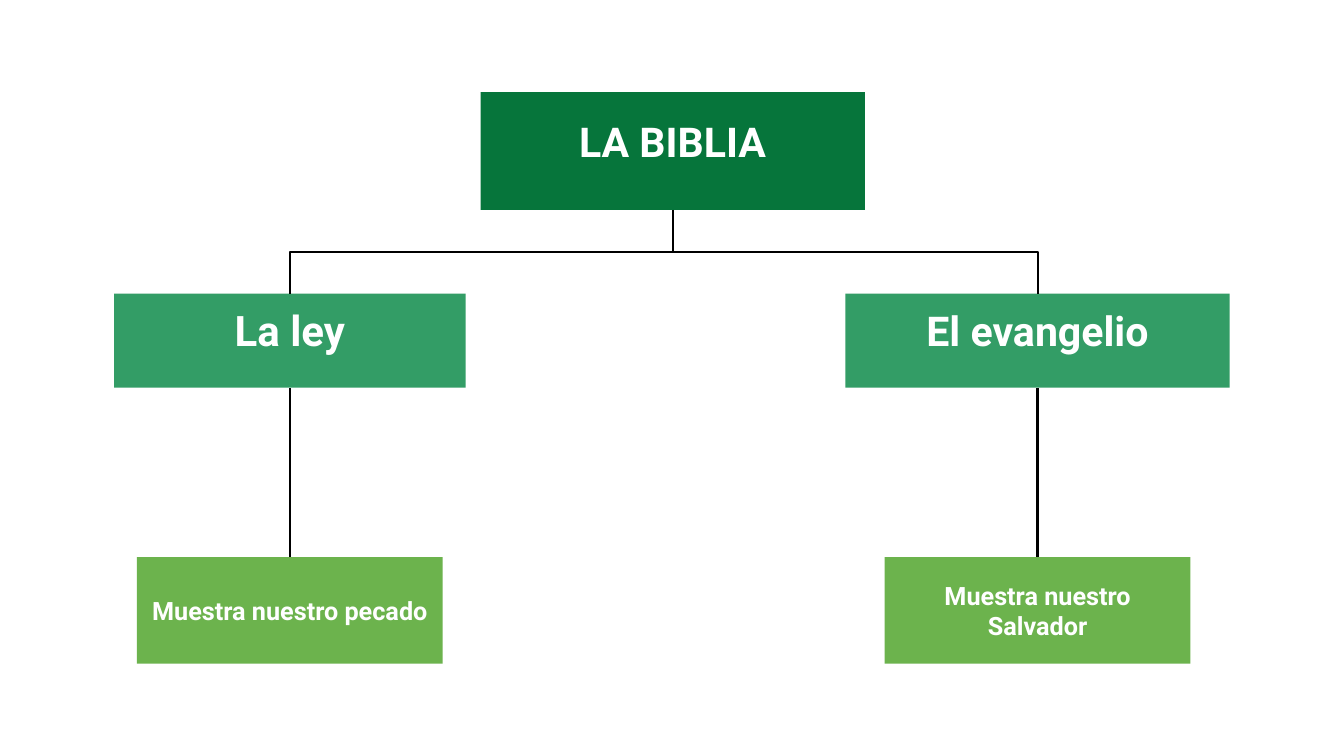
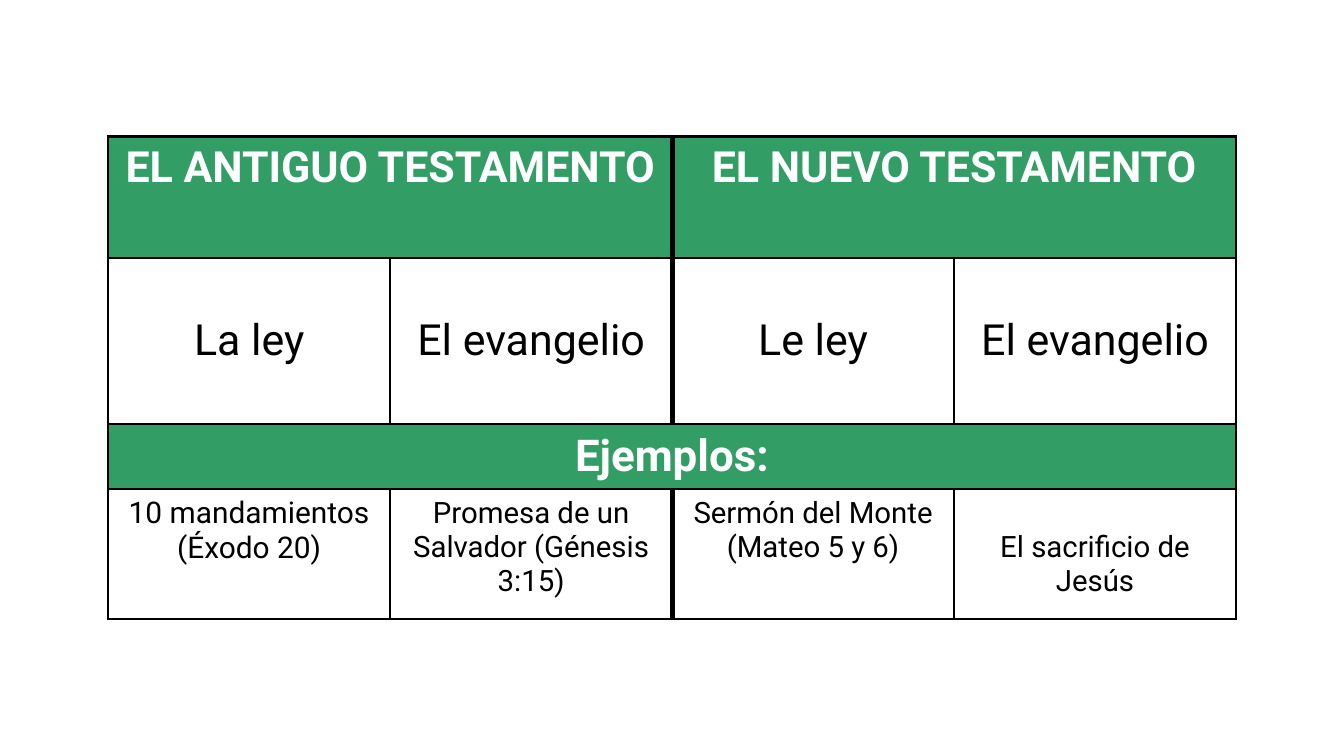
from lxml.etree import SubElement
from pptx import Presentation
from pptx.dml.color import RGBColor
from pptx.enum.shapes import MSO_CONNECTOR, MSO_SHAPE
from pptx.enum.text import MSO_ANCHOR, PP_ALIGN
from pptx.oxml import parse_xml
from pptx.oxml.ns import nsdecls, qn
from pptx.util import Pt

COLORS = {
    "root": "06753B",
    "branch": "008540",
    "leaf": "6CB34D",
    "white": "FFFFFF",
    "black": "000000",
}


def set_fill(fill, properties, color):
    fill.solid()
    fill.fore_color.rgb = RGBColor.from_string(COLORS[color])
    if color == "branch":
        rgb = properties.find(f"{qn('a:solidFill')}/{qn('a:srgbClr')}")
        SubElement(rgb, qn("a:alpha"), val="80000")


def write(text_frame, text, size, color, bold, spacing):
    text_frame.text = text
    for paragraph in text_frame.paragraphs:
        paragraph.alignment = PP_ALIGN.CENTER
        paragraph.line_spacing = spacing
        font_format = {"name": "Roboto", "size": Pt(size), "bold": bold}
        for name, value in font_format.items():
            setattr(paragraph.runs[0].font, name, value)
        paragraph.runs[0].font.color.rgb = RGBColor.from_string(COLORS[color])


presentation = Presentation()
presentation.slide_width, presentation.slide_height = Pt(1440), Pt(810)
blank_layout = presentation.slide_layouts[6]

# Slide 1
slide = presentation.slides.add_slide(blank_layout)
LAW_X, BIBLE_X, GOSPEL_X = 310.5, 720.75, 1111.7
LEVELS = {
    "root": {"top": 98.8, "height": 126, "margin_top": 5, "margin_bottom": 26},
    "branch": {"top": 314.7, "height": 100.8, "margin_top": 5, "margin_bottom": 28},
    "leaf": {"top": 596.9, "height": 114.2, "margin_top": 14.4, "margin_bottom": 14.4},
}
boxes = [
    ("LA BIBLIA", "root", BIBLE_X, 411.8, 44),
    ("La ley", "branch", LAW_X, 376.6, 45),
    ("El evangelio", "branch", GOSPEL_X, 411.8, 44),
    ("Muestra nuestro Salvador", "leaf", GOSPEL_X, 327.6, 27),
    ("Muestra nuestro pecado", "leaf", LAW_X, 327.6, 27),
]
for text, level_name, center, width, size in boxes:
    level = LEVELS[level_name]
    shape = slide.shapes.add_shape(
        MSO_SHAPE.RECTANGLE, Pt(center - width / 2), Pt(level["top"]), Pt(width), Pt(level["height"])
    )
    shape.shadow.inherit = False
    set_fill(shape.fill, shape._element.spPr, level_name)
    shape.line.fill.background()
    frame_format = {
        "word_wrap": True,
        "vertical_anchor": MSO_ANCHOR.MIDDLE,
        "margin_left": Pt(14.4),
        "margin_right": Pt(14.4),
        "margin_top": Pt(level["margin_top"]),
        "margin_bottom": Pt(level["margin_bottom"]),
    }
    for name, value in frame_format.items():
        setattr(shape.text_frame, name, value)
    write(shape.text_frame, text, size, "white", True, 1.0)

root_bottom, branch_bottom = (
    LEVELS[name]["top"] + LEVELS[name]["height"] for name in ("root", "branch")
)
branch_top, leaf_top = LEVELS["branch"]["top"], LEVELS["leaf"]["top"]
links = [
    (BIBLE_X, root_bottom, GOSPEL_X, branch_top),
    (LAW_X, branch_top, BIBLE_X, root_bottom),
    (LAW_X, leaf_top, LAW_X, branch_bottom),
    (GOSPEL_X, branch_bottom, GOSPEL_X, leaf_top),
]
for start_x, start_y, end_x, end_y in links:
    center_x, center_y = (start_x + end_x) / 2, (start_y + end_y) / 2
    half_run, half_drop = (end_x - start_x) / 2, (end_y - start_y) / 2
    connector = slide.shapes.add_connector(
        MSO_CONNECTOR.ELBOW,
        Pt(center_x + half_drop),
        Pt(center_y - half_run),
        Pt(center_x - half_drop),
        Pt(center_y + half_run),
    )
    connector._element.spPr.find(qn("a:xfrm")).set("rot", str(270 * 60000))
    connector.line.width = Pt(2.25)
    connector.line.color.rgb = RGBColor.from_string(COLORS["black"])
    SubElement(connector._element.spPr, qn("a:effectLst"))

# Slide 2
slide = presentation.slides.add_slide(blank_layout)
COLUMN_WIDTH = 302.1
ROW_HEIGHTS = [130.3, 177.8, 69.8, 139]
EXAMPLES_ROW = 2
table = slide.shapes.add_table(
    4, 4, Pt(115.9), Pt(146.2), Pt(4 * COLUMN_WIDTH), Pt(sum(ROW_HEIGHTS))
).table
table.first_row = table.horz_banding = False
for column in table.columns:
    column.width = Pt(COLUMN_WIDTH)
for row, height in zip(table.rows, ROW_HEIGHTS):
    row.height = Pt(height)
for row, first, last in [(0, 0, 1), (0, 2, 3), (EXAMPLES_ROW, 0, 3)]:
    table.cell(row, first).merge(table.cell(row, last))

contents = [
    ["EL ANTIGUO TESTAMENTO", None, "EL NUEVO TESTAMENTO", None],
    ["La ley", "El evangelio", "Le ley", "El evangelio"],
    ["Ejemplos:", None, None, None],
    [
        "10 mandamientos (Éxodo 20)",
        "Promesa de un Salvador (Génesis 3:15)",
        "Sermón del Monte\n(Mateo 5 y 6)",
        "El sacrificio de Jesús",
    ],
]
row_sizes = [46, 46, 47, 31.5]
for row, texts in enumerate(contents):
    heading = row in (0, EXAMPLES_ROW)
    for column, text in enumerate(texts):
        cell = table.cell(row, column)
        cell_format = {
            "margin_left": Pt(7.2),
            "margin_right": Pt(7.2),
            "margin_top": Pt(43.8 if (row, column) == (3, 3) else 7.2),
            "margin_bottom": Pt(7.2),
            "vertical_anchor": MSO_ANCHOR.MIDDLE if row == 1 else MSO_ANCHOR.TOP,
        }
        for name, value in cell_format.items():
            setattr(cell, name, value)
        properties = cell._tc.get_or_add_tcPr()
        set_fill(cell.fill, properties, "branch" if heading else "white")
        if text:
            size = 32 if (row, column) == (3, 0) else row_sizes[row]
            write(cell.text_frame, text, size, "white" if heading else "black", heading, 0.99)
        last_column = column + (cell.span_width if cell.is_merge_origin else 1) - 1
        divided = row != EXAMPLES_ROW
        borders = {
            "lnL": 6 if divided and column == 2 else 3,
            "lnR": 6 if divided and last_column == 1 else 3,
            "lnT": 3,
            "lnB": 3,
        }
        for position, (side, width) in enumerate(borders.items()):
            properties.insert(position, parse_xml(
                f'<a:{side} {nsdecls("a")} w="{Pt(width)}"><a:solidFill>'
                f'<a:srgbClr val="{COLORS["black"]}"/></a:solidFill></a:{side}>'
            ))

presentation.save("out.pptx")
